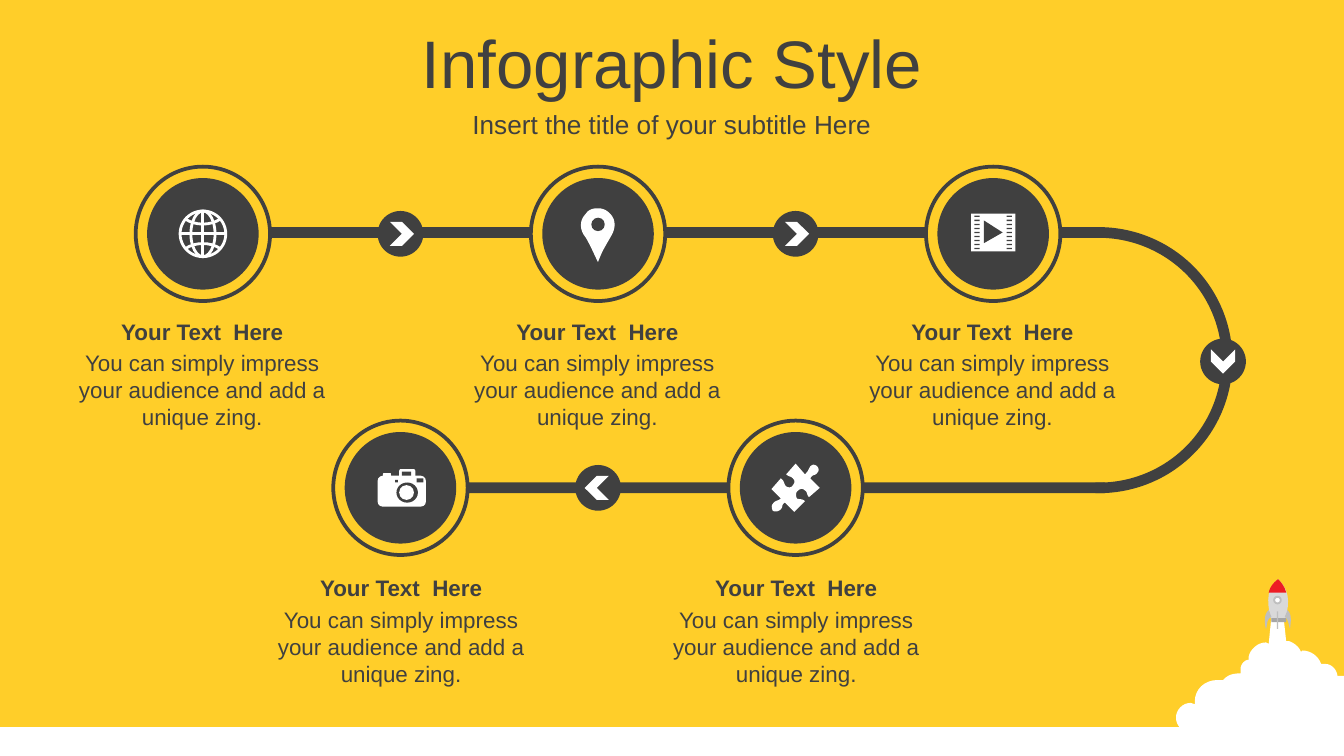
from math import cos, pi
from pptx import Presentation
from pptx.dml.color import RGBColor
from pptx.enum.shapes import MSO_SHAPE as Shape
from pptx.enum.text import MSO_ANCHOR as Anchor, MSO_AUTO_SIZE as AutoSize, PP_ALIGN as Align
from pptx.util import Inches, Pt

THEME = {
    "font": "Arial", "title": 36, "subtitle": 14, "text": 12,
    "yellow": "FFCE29", "dark": "404040", "white": "FFFFFF", "red": "ED1C24",
    "light": "D9D9D9", "silver": "BFBFBF", "grey": "A6A6A6",
}
TITLE = "Infographic Style"
SUBTITLE = "Insert the title of your subtitle Here"
HEADING = "Your Text  Here"
BODY = "You can simply impress your audience and add a unique zing."

PITCH, FIRST_X = 2.94, 1.51
ROWS = [
    {"middle": 1.74, "indent": 1.11, "heading": 2.32, "body": 2.55},
    {"middle": 3.63, "indent": 1.1, "heading": 4.22, "body": 4.46},
]
STOPS = [("globe", 0, 0), ("pin", 1, 0), ("film", 2, 0), ("camera", 0.5, 1), ("puzzle", 1.5, 1)]
ARROWS = [(2.98, 1.74, 0), (5.92, 1.74, 0), (4.45, 3.63, 180), (9.1, 2.69, 90)]
BARS = [(1.49, 1.69, 6.73), (2.63, 3.59, 5.59)]

CLOUD = [
    (9.46, 4.59), (9.55, 4.59), (9.57, 4.77), (9.59, 4.77), (9.62, 4.78, 9.65, 4.8, 9.67, 4.83),
    (9.68, 4.85), (9.69, 4.84), (9.75, 4.84, 9.81, 4.88, 9.83, 4.94), (9.86, 4.94),
    (9.9, 4.94, 9.94, 4.97, 9.95, 5.02), (9.95, 5.03), (10, 5.03), (10, 5.61), (8.95, 5.61),
    (8.92, 5.44), (8.91, 5.45, 8.89, 5.45, 8.86, 5.45), (8.8, 5.45, 8.75, 5.4, 8.75, 5.34),
    (8.75, 5.28, 8.8, 5.23, 8.86, 5.23), (8.89, 5.24), (8.89, 5.22),
    (8.89, 5.13, 8.96, 5.06, 9.06, 5.06), (9.1, 5.06), (9.11, 5.05),
    (9.14, 5.02, 9.18, 5.01, 9.23, 5.01), (9.23, 4.98), (9.23, 4.95, 9.25, 4.92, 9.28, 4.91),
    (9.29, 4.91), (9.29, 4.89), (9.3, 4.83, 9.36, 4.78, 9.42, 4.78), (9.44, 4.79),
]
HULL = [(9.46, 4.62), (9.44, 4.53, 9.4, 4.4, 9.51, 4.31), (9.62, 4.41, 9.58, 4.54, 9.56, 4.62)]
NOSE = [(9.51, 4.31), (9.54, 4.34, 9.56, 4.37, 9.57, 4.41), (9.44, 4.41),
        (9.45, 4.37, 9.47, 4.34, 9.51, 4.31)]
LEFT_FIN = [(9.44, 4.54), (9.46, 4.59), (9.42, 4.61, 9.43, 4.66, 9.42, 4.68),
            (9.41, 4.65, 9.4, 4.57, 9.44, 4.54)]
RIGHT_FIN = [(9.58, 4.54), (9.56, 4.59), (9.59, 4.61, 9.59, 4.66, 9.6, 4.68),
             (9.6, 4.65, 9.62, 4.57, 9.58, 4.54)]
PIN = [(4.45, 1.55), (4.48, 1.55, 4.51, 1.56, 4.54, 1.59), (4.59, 1.64, 4.58, 1.71, 4.54, 1.77),
       (4.5, 1.84, 4.48, 1.87, 4.45, 1.95), (4.41, 1.87, 4.4, 1.84, 4.36, 1.77),
       (4.31, 1.71, 4.31, 1.64, 4.36, 1.59), (4.38, 1.56, 4.41, 1.55, 4.45, 1.55)]
PUZZLE = [
    (6.08, 3.47), (6.09, 3.48, 6.1, 3.5, 6.08, 3.52), (6.07, 3.54, 6.04, 3.53, 6.03, 3.56),
    (6.1, 3.63), (6.02, 3.7), (6, 3.68, 6.01, 3.66, 5.99, 3.65),
    (5.97, 3.63, 5.95, 3.64, 5.94, 3.65), (5.92, 3.66, 5.92, 3.69, 5.93, 3.71),
    (5.96, 3.72, 5.97, 3.71, 5.99, 3.73), (5.91, 3.81), (5.84, 3.74),
    (5.81, 3.76, 5.83, 3.77, 5.81, 3.79), (5.79, 3.81, 5.76, 3.81, 5.75, 3.8),
    (5.74, 3.78, 5.74, 3.76, 5.75, 3.75), (5.77, 3.72, 5.79, 3.73, 5.81, 3.71),
    (5.74, 3.64), (5.81, 3.56), (5.84, 3.58, 5.83, 3.6, 5.85, 3.62),
    (5.87, 3.63, 5.89, 3.63, 5.9, 3.61), (5.91, 3.6, 5.92, 3.58, 5.9, 3.56),
    (5.88, 3.54, 5.87, 3.55, 5.85, 3.53), (5.92, 3.45), (5.99, 3.53),
    (6.02, 3.5, 6.01, 3.5, 6.03, 3.47), (6.05, 3.45, 6.07, 3.46, 6.08, 3.47),
]
CAMERA = [
    (Shape.ROUNDED_RECTANGLE, 2.81, 3.54, 0.36, 0.23, "white"),
    (Shape.ROUNDED_RECTANGLE, 2.97, 3.49, 0.12, 0.08, "white"),
    (Shape.ROUNDED_RECTANGLE, 2.85, 3.52, 0.06, 0.04, "white"),
    (Shape.RECTANGLE, 2.99, 3.51, 0.07, 0.03, "dark"),
    (Shape.RECTANGLE, 2.94, 3.57, 0.02, 0.02, "dark"),
    (Shape.RECTANGLE, 3.1, 3.56, 0.05, 0.03, "dark"),
    (Shape.OVAL, 2.95, 3.59, 0.16, 0.15, "dark"),
    (Shape.OVAL, 2.97, 3.61, 0.11, 0.11, "white"),
]

presentation = Presentation()
presentation.slide_width, presentation.slide_height = Inches(10), Inches(10 * 9 / 16)
slide = presentation.slides.add_slide(presentation.slide_layouts[0])
shapes = slide.shapes


def color(name):
    return RGBColor.from_string(THEME[name])


def paint(shape, fill, line=None, width=1):
    shape.shadow.inherit = False
    if fill:
        shape.fill.solid()
        shape.fill.fore_color.rgb = color(fill)
    else:
        shape.fill.background()
    if line:
        shape.line.color.rgb = color(line)
        shape.line.width = Pt(width)
    else:
        shape.line.fill.background()
    return shape


def add(kind, left, top, width, height, fill, line=None, weight=1):
    box = [Inches(value) for value in (left, top, width, height)]
    return paint(shapes.add_shape(kind, *box), fill, line, weight)


def centered(kind, x, y, width, height, fill, line=None, weight=1):
    return add(kind, x - width / 2, y - height / 2, width, height, fill, line, weight)


def flatten(outline, steps=8):
    points = [outline[0]]
    for segment in outline[1:]:
        if len(segment) == 2:
            points.append(segment)
            continue
        controls = [points[-1], segment[:2], segment[2:4], segment[4:]]
        for step in range(1, steps + 1):
            t = step / steps
            weights = ((1 - t) ** 3, 3 * t * (1 - t) ** 2, 3 * t * t * (1 - t), t ** 3)
            points.append(tuple(sum(w * c[axis] for w, c in zip(weights, controls))
                                for axis in (0, 1)))
    return points


def draw(outline, fill, line=None, width=1, close=True):
    points = [(Inches(x), Inches(y)) for x, y in flatten(outline)]
    builder = shapes.build_freeform(*points[0])
    builder.add_line_segments(points[1:], close=close)
    return paint(builder.convert_to_shape(), fill, line, width)


def write(shape, text, size, bold=False, anchor=Anchor.TOP):
    frame = shape.text_frame
    frame.word_wrap = True
    frame.auto_size = AutoSize.NONE
    frame.vertical_anchor = anchor
    paragraph = frame.paragraphs[0]
    paragraph.alignment = Align.CENTER
    run = paragraph.add_run()
    run.text = text
    run.font.name, run.font.size, run.font.bold = THEME["font"], Pt(THEME[size]), bold
    run.font.color.rgb = color("dark")


def globe(x, y):
    for width in (0.34, 0.18):
        centered(Shape.OVAL, x, y, width, 0.34, None, "white", 1.5)
    draw([(x, y - 0.17), (x, y + 0.17)], None, "white", 1.5, False)
    draw([(x - 0.17, y), (x + 0.17, y)], None, "white", 1.5, False)
    for side in (-1, 1):
        edge, middle = y + side * 0.11, y + side * 0.06
        draw([(x - 0.13, edge), (x - 0.06, middle, x + 0.06, middle, x + 0.13, edge)],
             None, "white", 1.5, False)


def pin(x, y):
    draw(PIN, "white")
    centered(Shape.OVAL, x, y - 0.07, 0.1, 0.1, "dark")


def film(x, y):
    centered(Shape.RECTANGLE, x, y - 0.01, 0.33, 0.28, "white")
    for hole in range(9):
        for side in (-1, 1):
            centered(Shape.RECTANGLE, x + side * 0.12, y - 0.13 + hole * 0.03, 0.04, 0.01, "dark")
    draw([(x - 0.07, y - 0.1), (x - 0.07, y + 0.07), (x + 0.07, y - 0.01)], "dark")


def camera(x, y):
    for part in CAMERA:
        add(*part)


def puzzle(x, y):
    draw(PUZZLE, "white")


ICONS = {"globe": globe, "pin": pin, "film": film, "camera": camera, "puzzle": puzzle}

slide.background.fill.solid()
slide.background.fill.fore_color.rgb = color("yellow")
for holder, text, size, top, height in zip(
        slide.placeholders, (TITLE, SUBTITLE), ("title", "subtitle"), (0.14, 0.77), (0.63, 0.31)):
    holder.left, holder.top = Inches(0), Inches(top)
    holder.width, holder.height = Inches(10), Inches(height)
    write(holder, text, size, anchor=Anchor.MIDDLE)

add(Shape.RECTANGLE, 0, 5.41, 10, 0.22, "white")
draw(CLOUD, "white")
draw(HULL, "light")
add(Shape.RECTANGLE, 9.46, 4.6, 0.11, 0.03, "grey")
draw(NOSE, "red")
add(Shape.OVAL, 9.48, 4.44, 0.05, 0.05, "white", "silver")
add(Shape.RECTANGLE, 9.5, 4.55, 0.01, 0.13, "silver")
for fin in (LEFT_FIN, RIGHT_FIN):
    draw(fin, "silver")

bend = add(Shape.BLOCK_ARC, 7.18, 1.69, 1.99, 1.98, "dark")
for index, value in enumerate((161.27, 54.9, 0.04)):
    bend.adjustments[index] = value
for left, top, width in BARS:
    add(Shape.RECTANGLE, left, top, width, 0.08, "dark")

for x, y, angle in ARROWS:
    centered(Shape.OVAL, x, y, 0.34, 0.34, "dark").rotation = angle
    shift = 0.01 * cos(angle * pi / 180)
    centered(Shape.CHEVRON, x + shift, y, 0.18, 0.18, "white").rotation = angle

for icon, column, row_index in STOPS:
    row = ROWS[row_index]
    x, y = FIRST_X + column * PITCH, row["middle"]
    centered(Shape.OVAL, x, y, 1, 1, "yellow", "dark", 2)
    centered(Shape.OVAL, x, y, 0.83, 0.83, "dark")
    ICONS[icon](x, y)
    for text, top, height, bold in ((BODY, row["body"], 0.71, False),
                                    (HEADING, row["heading"], 0.3, True)):
        box = shapes.add_textbox(Inches(x - row["indent"]), Inches(top), Inches(2.21), Inches(height))
        write(box, text, "text", bold)

presentation.save("out.pptx")
